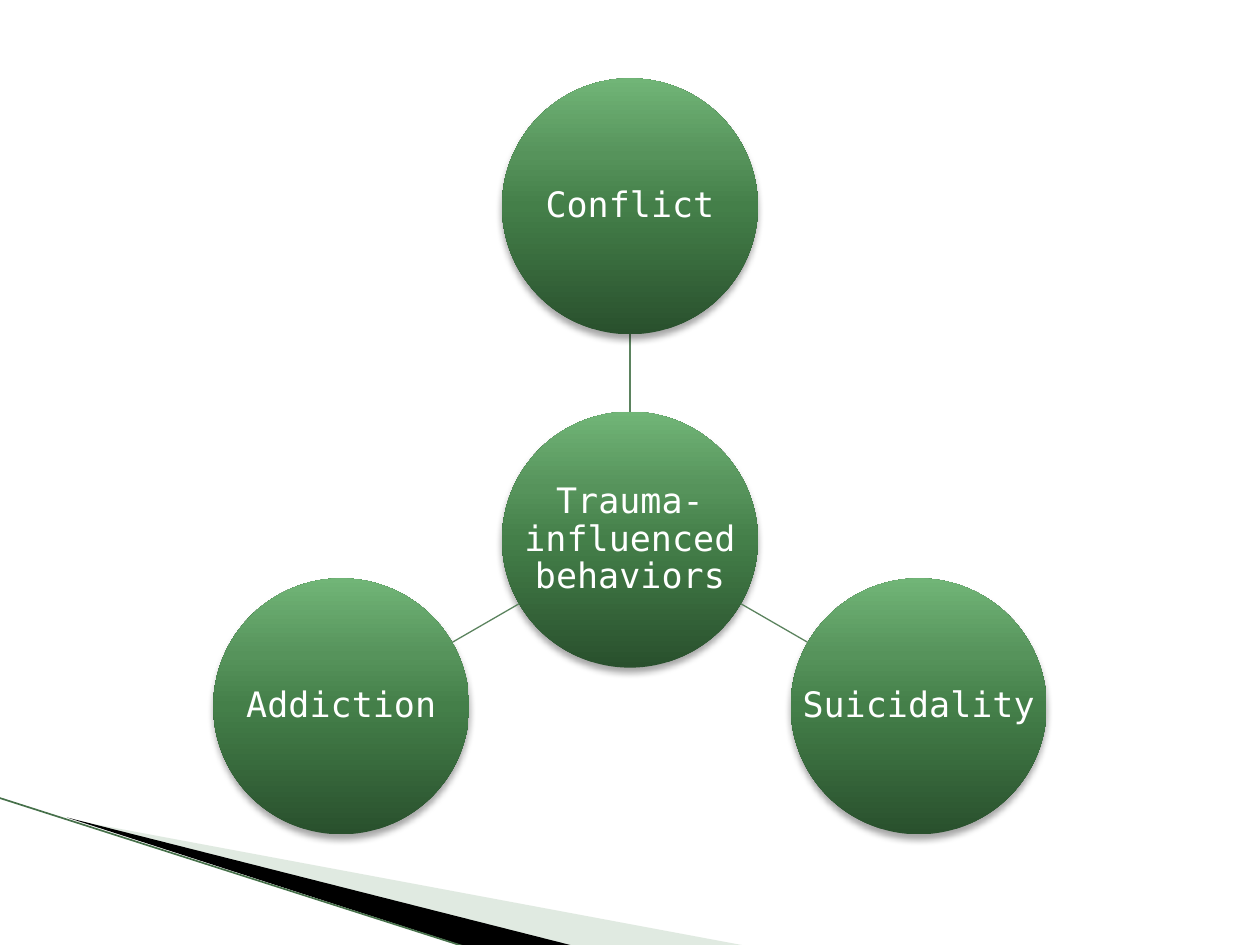
from math import cos, radians, sin

from lxml import etree
from pptx import Presentation
from pptx.dml.color import RGBColor
from pptx.enum.shapes import MSO_CONNECTOR, MSO_SHAPE
from pptx.enum.text import MSO_ANCHOR, PP_ALIGN
from pptx.oxml.ns import qn
from pptx.util import Cm, Pt

STRAIGHT = MSO_CONNECTOR.STRAIGHT
ELLIPSE = MSO_SHAPE.OVAL
MIDDLE = MSO_ANCHOR.MIDDLE
CENTER = PP_ALIGN.CENTER

WHITE = RGBColor(0xFF, 0xFF, 0xFF)
BLACK = RGBColor(0x00, 0x00, 0x00)
PALE_GREEN = RGBColor(0xB3, 0xCB, 0xB5)
EDGE_GREEN = RGBColor(0x46, 0x70, 0x4A)
SPOKE_GREEN = RGBColor(0x5B, 0x83, 0x5E)
CIRCLE_STOPS = [
    (0, RGBColor(0x29, 0x50, 0x2D)),
    (50, RGBColor(0x44, 0x7F, 0x49)),
    (70, RGBColor(0x56, 0x93, 0x5B)),
    (100, RGBColor(0x71, 0xB5, 0x77)),
]

FONT = "DejaVu Sans Mono"
HUB = (12.7, 10.88)
RADIUS = 2.58
ORBIT = 6.72


def add_color(parent, color, alpha=None):
    element = etree.SubElement(parent, qn("a:srgbClr"), val=str(color))
    if alpha is not None:
        etree.SubElement(element, qn("a:alpha"), val=str(alpha * 1000))


class SlideBuilder:
    """Holds the style and the current slide; lengths are in centimetres."""

    def __init__(self, slide):
        self.slide = slide
        self.shapes = slide.shapes

    def line(self, start, end, color, width):
        connector = self.shapes.add_connector(
            STRAIGHT, *(Cm(value) for value in (*start, *end)))
        connector.line.color.rgb = color
        connector.line.width = Pt(width)
        etree.SubElement(connector._element.spPr, qn("a:effectLst"))

    def wedge(self, points, color, alpha=None):
        corners = [(Cm(x), Cm(y)) for x, y in points]
        builder = self.shapes.build_freeform(*corners[0])
        builder.add_line_segments(corners[1:], close=True)
        shape = builder.convert_to_shape()
        shape.shadow.inherit = False
        shape.line.fill.background()
        shape.fill.solid()
        shape.fill.fore_color.rgb = color
        if alpha is not None:
            fill_color = shape._element.spPr.find(qn("a:solidFill"))[0]
            etree.SubElement(fill_color, qn("a:alpha"), val=str(alpha * 1000))

    def circle(self, center, text):
        x, y = center
        box = (Cm(x - RADIUS), Cm(y - RADIUS), Cm(2 * RADIUS), Cm(2 * RADIUS))
        shape = self.shapes.add_shape(ELLIPSE, *box)
        shape.line.fill.background()
        self.gradient(shape)
        self.shadow(shape)
        self.label(box, text)

    def gradient(self, shape):
        shape.fill.gradient()
        shape.fill.gradient_angle = 90
        stops = shape._element.spPr.find(qn("a:gradFill")).find(qn("a:gsLst"))
        for stop in list(stops):
            stops.remove(stop)
        for position, color in CIRCLE_STOPS:
            stop = etree.SubElement(stops, qn("a:gs"), pos=str(position * 1000))
            add_color(stop, color)

    def shadow(self, shape):
        shape.shadow.inherit = False
        effects = shape._element.spPr.find(qn("a:effectLst"))
        shadow = etree.SubElement(
            effects, qn("a:outerShdw"), blurRad=str(Pt(4)), dist=str(Pt(3)),
            dir=str(90 * 60000), rotWithShape="0")
        add_color(shadow, BLACK, 35)

    def label(self, box, text):
        # A full-width box lets long words use the whole circle
        frame = self.shapes.add_textbox(*box).text_frame
        frame.word_wrap = True
        frame.vertical_anchor = MIDDLE
        frame.margin_left = frame.margin_right = Cm(0.03)
        frame.margin_top = frame.margin_bottom = Cm(0.03)
        paragraph = frame.paragraphs[0]
        paragraph.text = text
        paragraph.alignment = CENTER
        paragraph.line_spacing = 0.9
        paragraph.font.name = FONT
        paragraph.font.size = Pt(20)
        paragraph.font.color.rgb = WHITE


def main():
    presentation = Presentation()
    presentation.slide_width = Cm(25.4)
    presentation.slide_height = Cm(19.05)
    slide = presentation.slides.add_slide(presentation.slide_layouts[6])
    builder = SlideBuilder(slide)

    # Corner decoration
    builder.wedge([(1.4, 16.52), (15.11, 19.08), (11.58, 19.08)], PALE_GREEN, 40)
    builder.wedge([(1.35, 16.48), (11.61, 19.08), (9.45, 19.1)], BLACK)
    builder.line((-0.03, 16.08), (9.42, 19.1), EDGE_GREEN, 0.95)

    # Hub with three behaviors spaced evenly around it
    builder.circle(HUB, "Trauma-influenced behaviors")
    behaviors = ["Conflict", "Suicidality", "Addiction"]
    for index, behavior in enumerate(behaviors):
        angle = radians(-90 + index * 360 / len(behaviors))

        def at(distance):
            return (HUB[0] + distance * cos(angle), HUB[1] + distance * sin(angle))

        builder.line(at(RADIUS), at(ORBIT - RADIUS), SPOKE_GREEN, 0.75)
        builder.circle(at(ORBIT), behavior)

    presentation.save("out.pptx")


if __name__ == "__main__":
    main()
